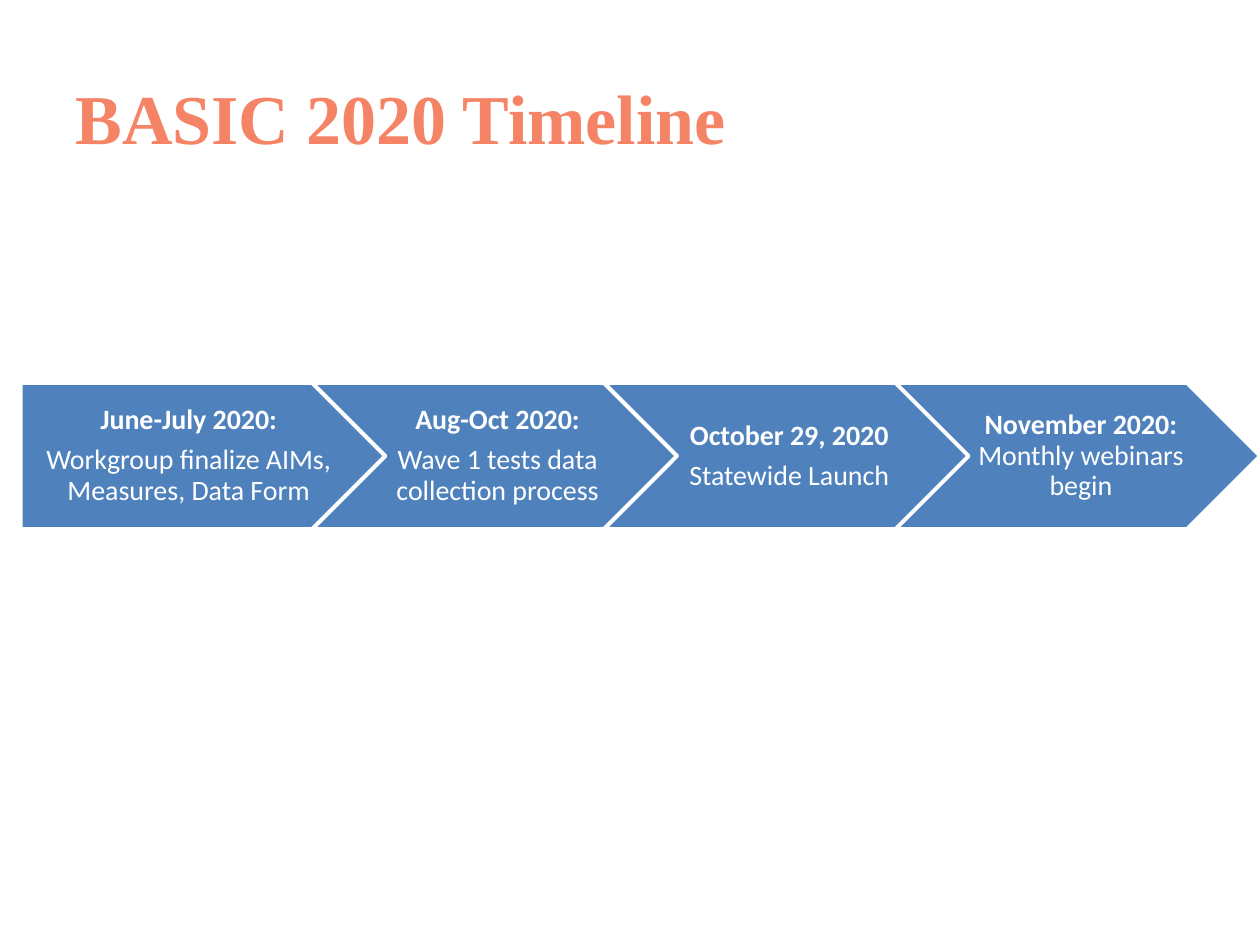
from pptx import Presentation, util as u
from pptx.dml.color import RGBColor
from pptx.enum import shapes, text

PX = u.Inches(1) / 126


def px(n):
    return u.Emu(round(n * PX))


def color(value):
    return RGBColor.from_string(value)


prs = Presentation()
prs.slide_width, prs.slide_height = px(1260), px(945)
slide = prs.slides.add_slide(prs.slide_layouts[5])

title = slide.shapes.title
title.left, title.top, title.width, title.height = px(63), px(38), px(1134), px(158)
title.text_frame.text = "BASIC 2020 Timeline"
title.text_frame.vertical_anchor = text.MSO_ANCHOR.MIDDLE
heading = title.text_frame.paragraphs[0]
heading.alignment = text.PP_ALIGN.LEFT
heading.font.name = "Times New Roman"
heading.font.size = u.Pt(40)
heading.font.bold = True
heading.font.color.rgb = color("F58466")

phases = [
    [[("June-July 2020:", True)],
     [("Workgroup finalize AIMs, Measures, Data Form", False)]],
    [[("Aug-Oct 2020:", True)],
     [("Wave 1 tests data collection process", False)]],
    [[("October 29, 2020", True)],
     [("Statewide Launch", False)]],
    [[("November 2020: ", True), ("Monthly webinars begin", False)]],
]
first_left, top, width, height = 21, 383, 364, 146
step = (1260 - width - first_left) / (len(phases) - 1)

timeline = slide.shapes.add_group_shape()
for i, lines in enumerate(phases):
    preset = shapes.MSO_SHAPE.CHEVRON if i else shapes.MSO_SHAPE.PENTAGON
    phase = timeline.shapes.add_shape(
        preset, px(first_left + i * step), px(top), px(width), px(height))
    phase.shadow.inherit = False
    phase.fill.solid()
    phase.fill.fore_color.rgb = color("4F81BD")
    phase.line.color.rgb = color("FFFFFF")
    phase.line.width = u.Pt(2)

    frame = phase.text_frame
    frame.word_wrap = True
    frame.vertical_anchor = text.MSO_ANCHOR.MIDDLE
    frame.margin_left = px(9 if i else 11)
    frame.margin_right = px(3)
    frame.margin_top = frame.margin_bottom = px(6)
    for n, line in enumerate(lines):
        paragraph = frame.add_paragraph() if n else frame.paragraphs[0]
        paragraph.alignment = text.PP_ALIGN.CENTER
        paragraph.line_spacing = 0.9
        paragraph.space_after = u.Pt(5.6)
        paragraph.font.name = "Calibri"
        paragraph.font.size = u.Pt(16)
        paragraph.font.color.rgb = color("FFFFFF")
        for words, bold in line:
            run = paragraph.add_run()
            run.text = words
            run.font.bold = bold

prs.save("out.pptx")
